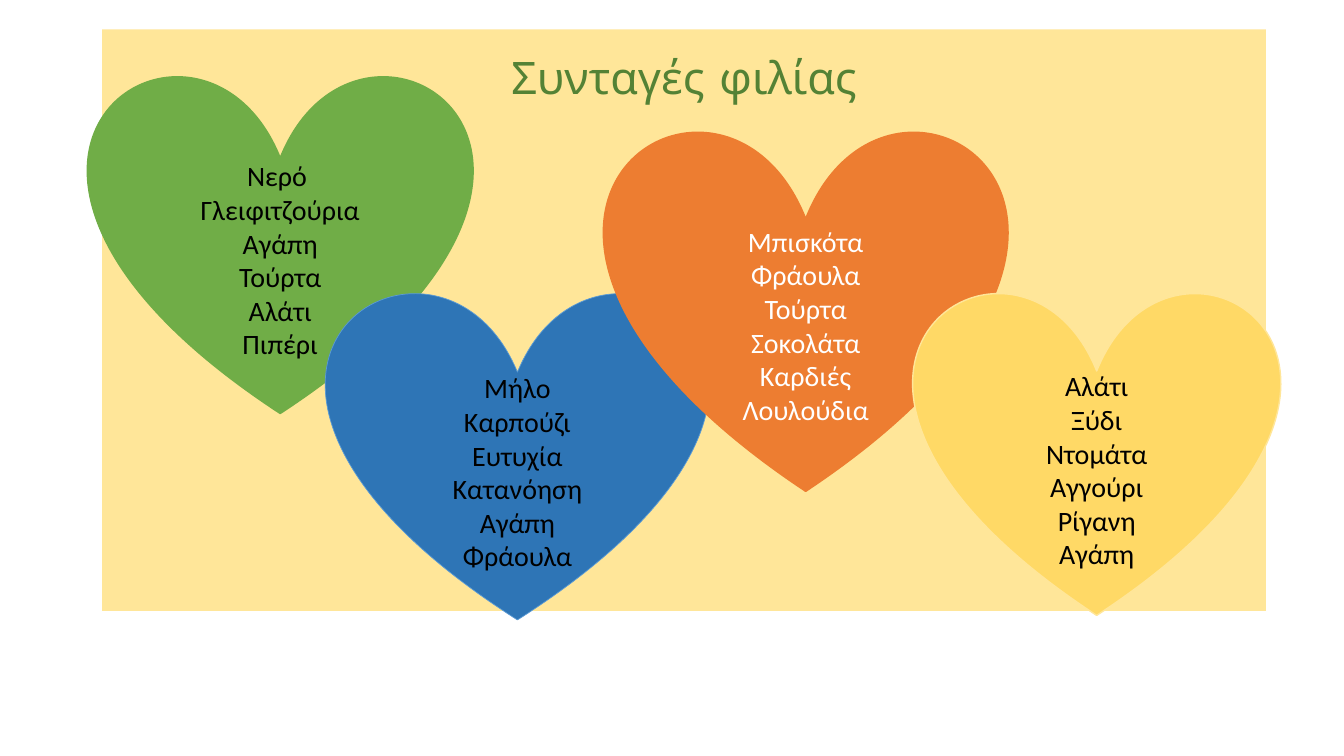
from pptx import Presentation, util as u
from pptx.dml.color import RGBColor
from pptx.enum import shapes, text

HUES = {
    "paper": "FFE699",
    "leaf": "548235",
    "green": "70AD47",
    "blue": "2E75B6",
    "sky": "5B9BD5",
    "orange": "ED7D31",
    "gold": "FFD966",
    "black": "000000",
    "white": "FFFFFF",
}


def hue(name):
    return RGBColor.from_string(HUES[name])


class Deck:
    def __init__(self):
        self.show = Presentation()
        self.show.slide_width = u.Inches(13.33)
        self.show.slide_height = u.Inches(7.5)
        self.slide = self.show.slides.add_slide(self.show.slide_layouts[5])

    def area(self, left, top, width, height):
        wide, high = self.show.slide_width, self.show.slide_height
        pairs = ((left, wide), (top, high), (width, wide), (height, high))
        return [int(share * full / 100) for share, full in pairs]

    def fill(self, shape, name):
        shape.fill.solid()
        shape.fill.fore_color.rgb = hue(name)

    def label(self, shape, words, font, size, ink, anchor, inset):
        frame = shape.text_frame
        frame.text = words
        frame.word_wrap = True
        frame.auto_size = text.MSO_AUTO_SIZE.NONE
        frame.vertical_anchor = anchor
        frame.margin_top = u.Inches(inset)
        for line in frame.paragraphs:
            line.alignment = text.PP_ALIGN.CENTER
            for run in line.runs:
                run.font.name = font
                run.font.size = u.Pt(size)
                run.font.color.rgb = hue(ink)

    def title(self, words, box):
        shape = self.slide.shapes.title
        shape.left, shape.top, shape.width, shape.height = self.area(*box)
        self.fill(shape, "paper")
        self.label(shape, words, "Comic Neue", 32, "leaf", text.MSO_ANCHOR.TOP, 0.26)
        shape.text_frame.paragraphs[0].line_spacing = 0.9

    def heart(self, box, color, edge, weight, ink, words):
        shape = self.slide.shapes.add_shape(shapes.MSO_SHAPE.HEART, *self.area(*box))
        shape.shadow.inherit = False
        self.fill(shape, color)
        shape.line.color.rgb = hue(edge)
        shape.line.width = u.Pt(weight)
        self.label(shape, "\n".join(words), "Calibri", 20, ink, text.MSO_ANCHOR.MIDDLE, 0.66)


HEARTS = [
    ((6.6, 9.6, 28.5, 45.1), "green", "green", 1, "black",
     ["Νερό ", "Γλειφιτζούρια", "Αγάπη", "Τούρτα", "Αλάτι", "Πιπέρι"]),
    ((24.3, 38.3, 28.4, 43.7), "blue", "sky", 0.5, "black",
     ["Μήλο", "Καρπούζι", "Ευτυχία", "Κατανόηση", "Αγάπη", "Φράουλα"]),
    ((45, 16.9, 29.9, 48.1), "orange", "orange", 1, "white",
     ["Μπισκότα", "Φράουλα", "Τούρτα", "Σοκολάτα", "Καρδιές", "Λουλούδια"]),
    ((68, 38.3, 27.2, 43.1), "gold", "paper", 1, "black",
     ["Αλάτι", "Ξύδι", "Ντομάτα", "Αγγούρι", "Ρίγανη", "Αγάπη"]),
]


def main():
    deck = Deck()
    deck.title("Συνταγές φιλίας", (7.6, 3.9, 86.6, 76.9))
    for heart in HEARTS:
        deck.heart(*heart)
    deck.show.save("out.pptx")


if __name__ == "__main__":
    main()
